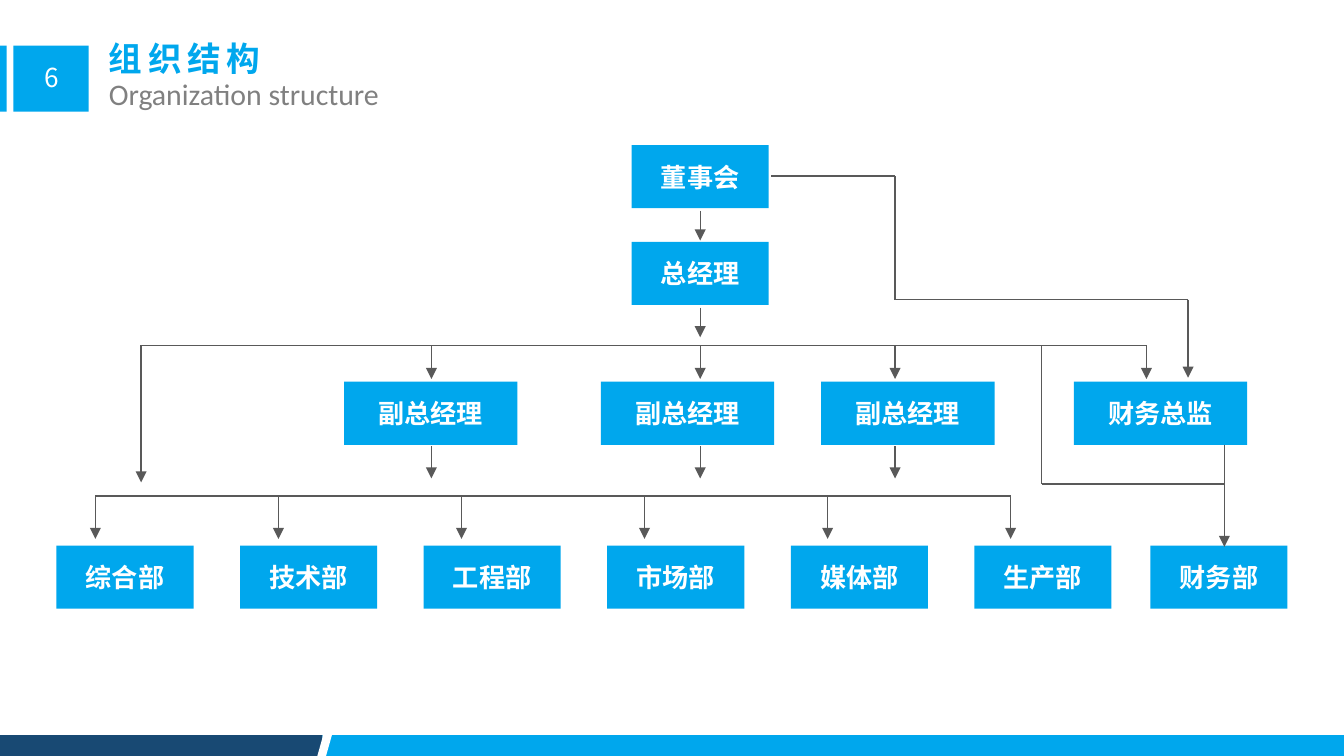
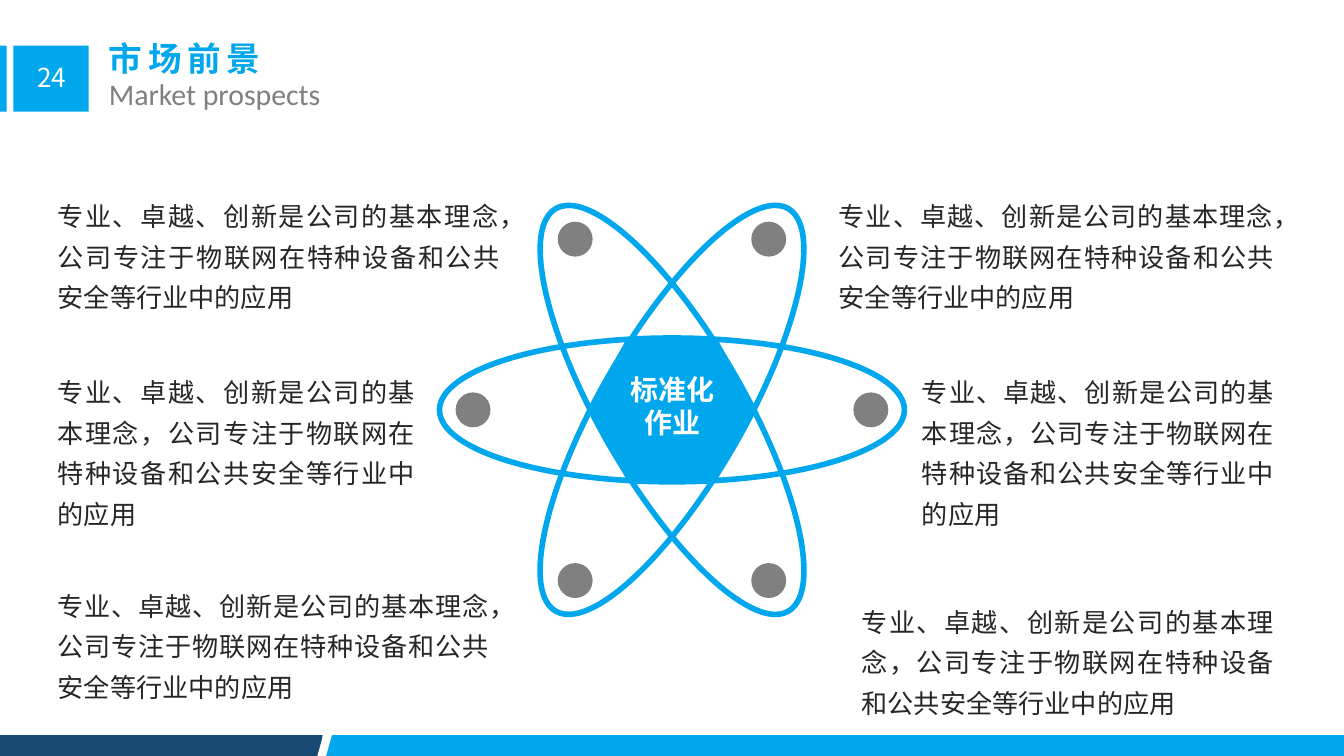
from dataclasses import dataclass
from typing import NamedTuple

from lxml.etree import SubElement
from pptx import Presentation
from pptx.dml.color import RGBColor
from pptx.enum.shapes import MSO_CONNECTOR, MSO_SHAPE
from pptx.enum.text import MSO_ANCHOR, MSO_AUTO_SIZE, PP_ALIGN
from pptx.oxml.ns import qn
from pptx.util import Inches, Pt


@dataclass(frozen=True)
class Theme:
    blue: str = "00A7ED"
    navy: str = "184973"
    white: str = "FFFFFF"
    gray: str = "808080"
    line: str = "595959"
    ink: str = "262626"
    chinese: str = "Noto Sans CJK SC"
    latin: str = "Calibri"
    title_size: int = 18
    subtitle_size: int = 16
    center_size: int = 15
    text_size: int = 14
    line_width: float = 0.75
    orbit_width: float = 3


THEME = Theme()


class Box(NamedTuple):
    left: float
    top: float
    width: float
    height: float

    def lengths(self) -> list:
        return [Inches(value) for value in self]


class Unit(NamedTuple):
    """One labelled box of the organization chart."""
    name: str
    left: float
    top: float
    width: float


class Link(NamedTuple):
    """A straight line of the chart, with or without an arrowhead."""
    x1: float
    y1: float
    x2: float
    y2: float
    arrow: bool = True


def write_text(shape, text: str, *, size: float, color: str, font: str = THEME.chinese,
               bold: bool = False, align=PP_ALIGN.LEFT, anchor=MSO_ANCHOR.TOP,
               wrap: bool = True, line_spacing: float = 1.0, letter_spacing: float = 0,
               margins: tuple = (0.1, 0.05)) -> None:
    frame = shape.text_frame
    frame.auto_size = MSO_AUTO_SIZE.NONE
    frame.word_wrap = wrap
    frame.vertical_anchor = anchor
    frame.margin_left = frame.margin_right = Inches(margins[0])
    frame.margin_top = frame.margin_bottom = Inches(margins[1])
    frame.text = text
    for paragraph in frame.paragraphs:
        paragraph.alignment = align
        paragraph.line_spacing = line_spacing
        paragraph.space_before = Pt(0)
        for run in paragraph.runs:
            run.font.name = font
            run.font.size = Pt(size)
            run.font.bold = bold
            run.font.color.rgb = RGBColor.from_string(color)
            properties = run.font._element
            SubElement(properties, qn("a:ea")).set("typeface", THEME.chinese)
            if letter_spacing:
                properties.set("spc", str(round(letter_spacing * 100)))


def add_block(slide, kind, box: Box, *, fill: str = "", outline: str = "", rotation: float = 0):
    """Add a preset shape with a plain fill or a plain outline."""
    shape = slide.shapes.add_shape(kind, *box.lengths())
    shape.shadow.inherit = False
    shape.rotation = rotation
    if fill:
        shape.fill.solid()
        shape.fill.fore_color.rgb = RGBColor.from_string(fill)
    else:
        shape.fill.background()
    if outline:
        shape.line.color.rgb = RGBColor.from_string(outline)
        shape.line.width = Pt(THEME.orbit_width)
    else:
        shape.line.fill.background()
    return shape


def add_text(slide, box: Box, text: str, **text_format) -> None:
    write_text(slide.shapes.add_textbox(*box.lengths()), text, **text_format)


def place(placeholder, box: Box) -> None:
    placeholder.left, placeholder.top, placeholder.width, placeholder.height = box.lengths()


def add_link(slide, link: Link) -> None:
    connector = slide.shapes.add_connector(
        MSO_CONNECTOR.STRAIGHT, *(Inches(value) for value in link[:4]))
    connector.line.color.rgb = RGBColor.from_string(THEME.line)
    connector.line.width = Pt(THEME.line_width)
    if link.arrow:
        SubElement(connector.line._get_or_add_ln(), qn("a:tailEnd")).set("type", "triangle")
    SubElement(connector._element.spPr, qn("a:effectLst"))


def add_framed_slide(presentation, number: int, title: str, subtitle: str):
    """Add a slide with the footer band, the number tab and both headings."""
    slide = presentation.slides.add_slide(presentation.slide_layouts[1])
    for box, color in (
        (Box(0, 5.47, 2.4, 0.16), THEME.navy),
        (Box(2.4, 5.47, 7.6, 0.16), THEME.blue),
        (Box(0, 0.34, 0.05, 0.49), THEME.blue),
        (Box(0.1, 0.34, 0.56, 0.49), THEME.blue),
    ):
        add_block(slide, MSO_SHAPE.RECTANGLE, box, fill=color)
    divider = add_block(slide, MSO_SHAPE.PARALLELOGRAM, Box(2.36, 5.47, 0.11, 0.16),
                        fill=THEME.white)
    divider.adjustments[0] = 0.41
    add_text(slide, Box(0.05, 0.41, 0.67, 0.34), str(number), size=THEME.text_size,
             color=THEME.white, align=PP_ALIGN.CENTER)

    heading, subheading = slide.shapes.title, slide.placeholders[1]
    place(heading, Box(0.71, 0.23, 3.96, 0.4))
    write_text(heading, title, size=THEME.title_size, color=THEME.blue, bold=True,
               letter_spacing=3)
    place(subheading, Box(0.71, 0.51, 6.67, 0.37))
    write_text(subheading, subtitle, size=THEME.subtitle_size, color=THEME.gray,
               font=THEME.latin)
    properties = subheading.text_frame.paragraphs[0]._p.get_or_add_pPr()
    properties.set("marL", "0")
    properties.set("indent", "0")
    SubElement(properties, qn("a:buNone"))
    return slide


def build_organization(presentation) -> None:
    slide = add_framed_slide(presentation, 6, "组织结构", "Organization structure")
    narrow, wide, height = 1.02, 1.29, 0.47
    manager_top, department_top = 2.84, 4.06
    departments = ("综合部", "技术部", "工程部", "市场部", "媒体部", "生产部")
    gaps = len(departments) - 1
    first_left, last_left = 0.42, 7.25
    units = [
        Unit("董事会", 4.7, 1.08, narrow),
        Unit("总经理", 4.7, 1.8, narrow),
        *(Unit("副总经理", left, manager_top, wide) for left in (2.56, 4.47, 6.11)),
        Unit("财务总监", 7.99, manager_top, wide),
        *(Unit(name, first_left + index * (last_left - first_left) / gaps,
               department_top, narrow) for index, name in enumerate(departments)),
        Unit("财务部", 8.56, department_top, narrow),
    ]
    for unit in units:
        shape = add_block(slide, MSO_SHAPE.RECTANGLE,
                          Box(unit.left, unit.top, unit.width, height), fill=THEME.blue)
        write_text(shape, unit.name, size=THEME.text_size, color=THEME.white, bold=True,
                   align=PP_ALIGN.CENTER, anchor=MSO_ANCHOR.MIDDLE)

    center, board_x, director_x = 5.21, 6.66, 8.84
    manager_bus, department_bus = 2.57, 3.69
    bus_left, bus_right = 0.71, 7.52
    finance_left, finance_right, finance_y = 7.75, 9.11, 3.6
    manager_columns = (3.21, center, board_x)
    links = [
        # Board to finance director
        Link(5.74, 1.31, board_x, 1.31, False),
        Link(board_x, 1.31, board_x, 2.23, False),
        Link(board_x, 2.23, director_x, 2.23, False),
        Link(director_x, 2.23, director_x, 2.81),
        # Board to general manager to the managers' bus
        Link(center, 1.57, center, 1.79),
        Link(center, 2.29, center, 2.51),
        Link(1.05, manager_bus, 8.53, manager_bus, False),
        Link(1.05, manager_bus, 1.05, 3.59),
        *(Link(x, manager_bus, x, 2.82) for x in (*manager_columns, 8.53)),
        # Finance branch
        Link(finance_left, manager_bus, finance_left, finance_y, False),
        Link(finance_left, finance_y, finance_right, finance_y, False),
        Link(finance_right, 3.31, finance_right, 4.07),
        # Managers to departments
        *(Link(x, 3.32, x, 3.56) for x in manager_columns),
        Link(bus_left, department_bus, bus_right, department_bus, False),
    ]
    for index in range(len(departments)):
        x = bus_left + index * (bus_right - bus_left) / gaps
        links.append(Link(x, department_bus, x, 4.01))
    for link in links:
        add_link(slide, link)


def build_prospects(presentation) -> None:
    slide = add_framed_slide(presentation, 24, "市场前景", "Market prospects")
    center_x, center_y, dot = 5.0, 3.05, 0.26
    for offset_x, offset_y in ((0.72, -1.27), (1.48, 0), (0.72, 1.27)):
        for side in (-1, 1):
            add_block(slide, MSO_SHAPE.OVAL,
                      Box(center_x + side * offset_x - dot / 2,
                          center_y + offset_y - dot / 2, dot, dot), fill=THEME.gray)
    orbit_width, orbit_height = 1.07, 3.46
    orbit = Box(center_x - orbit_width / 2, center_y - orbit_height / 2,
                orbit_width, orbit_height)
    for angle in (270, 30, 150):
        add_block(slide, MSO_SHAPE.OVAL, orbit, outline=THEME.blue, rotation=angle)
    core = add_block(slide, MSO_SHAPE.HEXAGON, Box(4.38, 2.51, 1.24, 1.07), fill=THEME.blue)
    core.adjustments[0] = 0.27
    add_text(slide, Box(4.59, 2.72, 0.83, 0.61), "标准化\n作业", size=THEME.center_size,
             color=THEME.white, font=THEME.latin, bold=True, align=PP_ALIGN.CENTER, wrap=False)

    statement = "专业、卓越、创新是公司的基本理念，公司专注于物联网在特种设备和公共安全等行业中的应用"
    for box in (
        Box(0.36, 1.38, 3.43, 0.99), Box(6.17, 1.38, 3.38, 0.96),
        Box(0.36, 2.69, 2.8, 1.27), Box(6.79, 2.69, 2.76, 1.3),
        Box(0.36, 4.28, 3.35, 0.96), Box(6.34, 4.4, 3.21, 0.96),
    ):
        add_text(slide, box, statement, size=THEME.text_size, color=THEME.ink,
                 align=PP_ALIGN.JUSTIFY, line_spacing=1.3, margins=(0.07, 0.04))


def main() -> None:
    presentation = Presentation()
    presentation.slide_width = Inches(10)
    presentation.slide_height = Inches(10) * 9 // 16
    build_organization(presentation)
    build_prospects(presentation)
    presentation.save("out.pptx")


if __name__ == "__main__":
    main()
